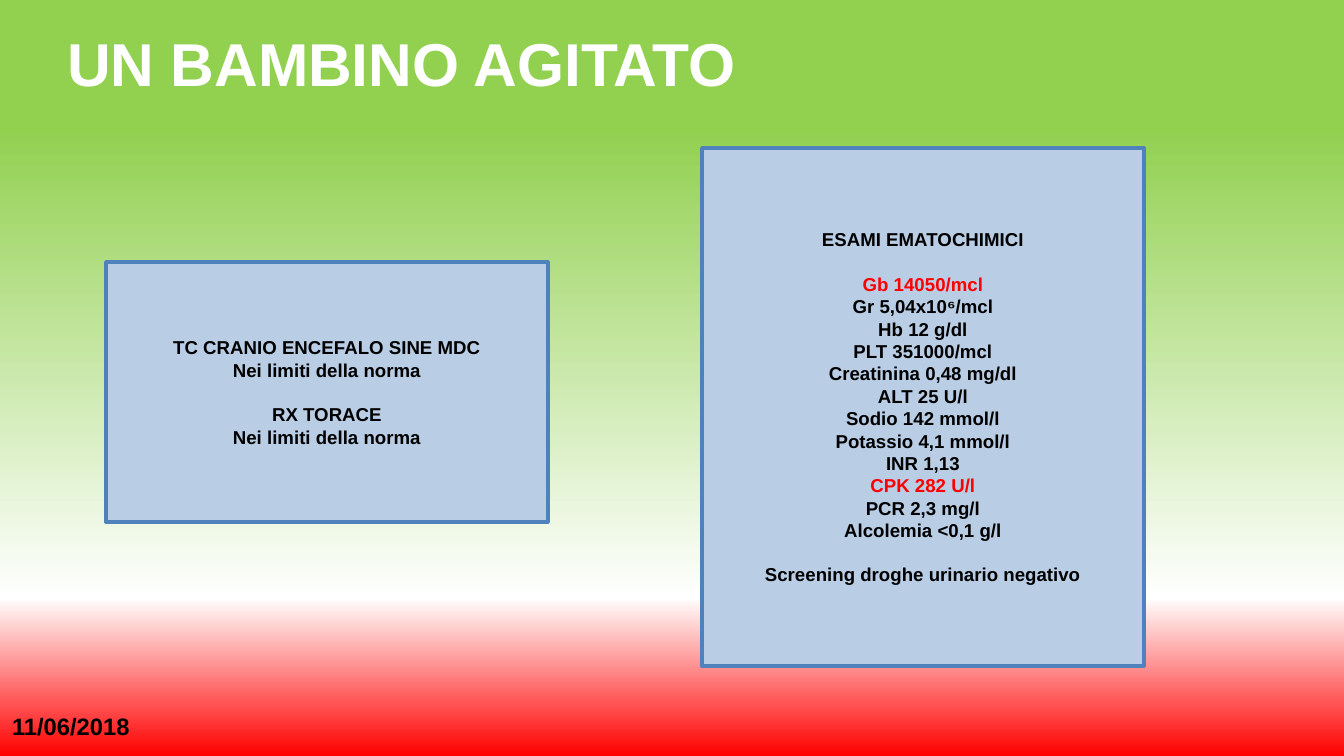
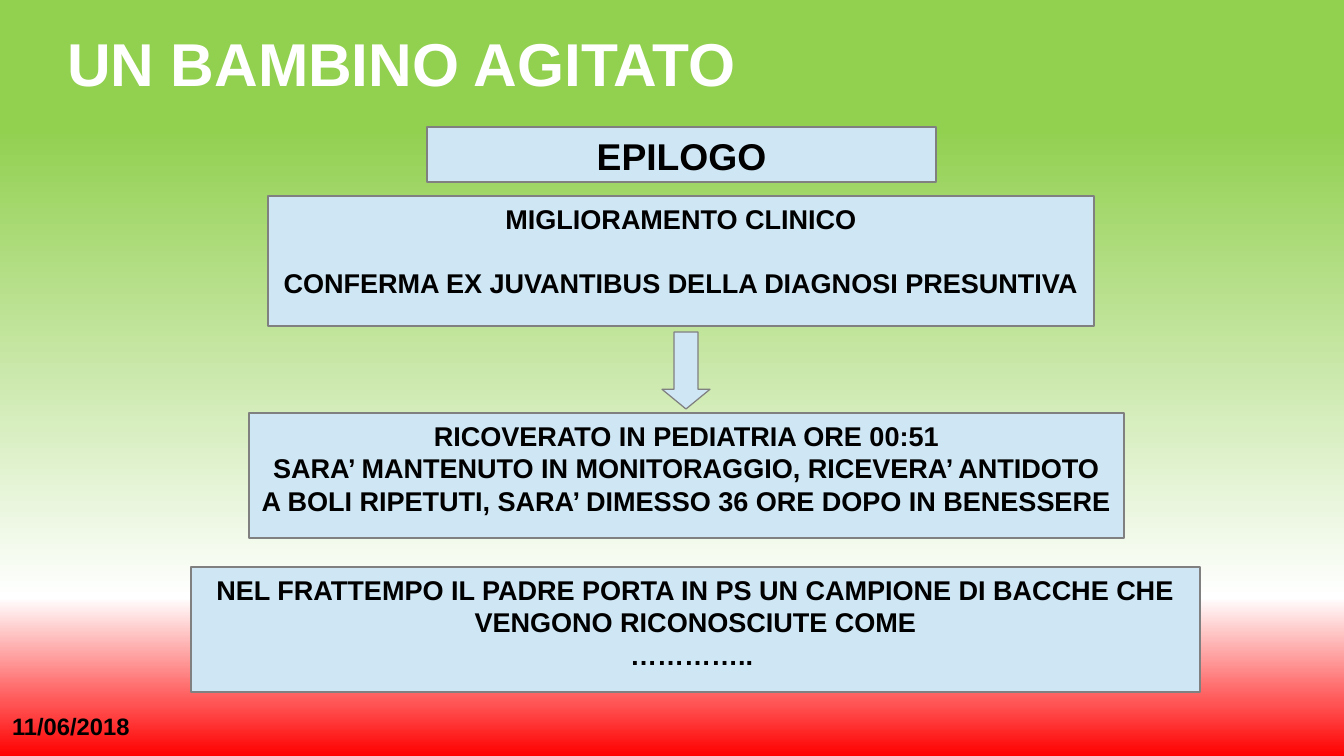
"""Build two slides of a paediatric case: test results and epilogue."""
from lxml import etree
from pptx import Presentation
from pptx.dml.color import RGBColor
from pptx.enum.shapes import MSO_SHAPE
from pptx.enum.text import MSO_ANCHOR, MSO_AUTO_SIZE, PP_ALIGN
from pptx.oxml import parse_xml
from pptx.util import Emu, Pt

RECTANGLE, DOWN_ARROW = MSO_SHAPE.RECTANGLE, MSO_SHAPE.DOWN_ARROW
TOP, MIDDLE = MSO_ANCHOR.TOP, MSO_ANCHOR.MIDDLE
LEFT, CENTER = PP_ALIGN.LEFT, PP_ALIGN.CENTER
NO_AUTOFIT = MSO_AUTO_SIZE.NONE

PX = 914400 / 122
SLIDE_SIZE = (1344, 756)
FONT = "Arial"
BLACK, WHITE, RED = "000000", "FFFFFF", "FF0000"
GRADIENT = [(17, "92D050"), (79, WHITE), (93, "FF5555"), (100, RED)]
EXAM_STYLE = {"fill": "B9CDE5", "line": "4F81BD", "weight": 2, "anchor": MIDDLE, "wrap": True}
STEP_STYLE = {"fill": "CFE7F5", "line": "808080", "weight": 0.75, "anchor": TOP, "wrap": False}

TITLE, TITLE_AREA = "UN BAMBINO AGITATO", (67, 5, 937, 115)
DATE, DATE_AREA = "11/06/2018", (0, 706, 211, 41)
ABNORMAL = {"Gb 14050/mcl", "CPK 282 U/l"}
EXAMS = [
    ((106, 262, 442, 260), 11, [
        ["TC CRANIO ENCEFALO SINE MDC", "Nei limiti della norma"],
        ["RX TORACE", "Nei limiti della norma"],
    ]),
    ((702, 148, 442, 518), 11, [
        ["ESAMI EMATOCHIMICI"],
        ["Gb 14050/mcl", "Gr 5,04x10⁶/mcl", "Hb 12 g/dl", "PLT 351000/mcl",
         "Creatinina 0,48 mg/dl", "ALT 25 U/l", "Sodio 142 mmol/l",
         "Potassio 4,1 mmol/l", "INR 1,13", "CPK 282 U/l", "PCR 2,3 mg/l",
         "Alcolemia <0,1 g/l"],
        ["Screening droghe urinario negativo"],
    ]),
]
EPILOGUE = [
    ((427, 127, 509, 55), 22, [["EPILOGO"]]),
    ((268, 196, 826, 130), 16, [
        ["MIGLIORAMENTO CLINICO"],
        ["CONFERMA EX JUVANTIBUS DELLA DIAGNOSI PRESUNTIVA"],
    ]),
    ((249, 413, 875, 125), 16, [
        ["RICOVERATO IN PEDIATRIA ORE 00:51",
         "SARA’ MANTENUTO IN MONITORAGGIO, RICEVERA’ ANTIDOTO",
         "A BOLI RIPETUTI, SARA’ DIMESSO 36 ORE DOPO IN BENESSERE"],
    ]),
    ((191, 567, 1009, 125), 16, [
        ["NEL FRATTEMPO IL PADRE PORTA IN PS UN CAMPIONE DI BACCHE CHE",
         "VENGONO RICONOSCIUTE COME",
         "………….. "],
    ]),
]
ARROW_AREA = (662, 332, 48, 77)
SLIDES = [(EXAMS, EXAM_STYLE, None), (EPILOGUE, STEP_STYLE, ARROW_AREA)]


def rgb(color):
    return RGBColor.from_string(color)


def emu(area):
    return [Emu(round(length * PX)) for length in area]


def set_background(master):
    fill = master.background.fill
    fill.gradient()
    fill.gradient_angle = 270
    stops = master._element.find(".//{*}bg//{*}gsLst")
    for stop in list(stops):
        stops.remove(stop)
    for position, color in GRADIENT:
        namespace = etree.QName(stops).namespace
        stops.append(parse_xml(
            f'<a:gs xmlns:a="{namespace}" pos="{position * 1000}">'
            f'<a:srgbClr val="{color}"/></a:gs>'))


def format_text(paragraph, size, color, align):
    paragraph.alignment = align
    for run in paragraph.runs:
        run.font.name, run.font.size, run.font.bold = FONT, Pt(size), True
        run.font.color.rgb = rgb(color)


def add_heading(slide):
    title = slide.shapes.title
    title.left, title.top, title.width, title.height = emu(TITLE_AREA)
    frame = title.text_frame
    frame.text = TITLE
    frame.auto_size, frame.vertical_anchor = NO_AUTOFIT, MIDDLE
    frame.margin_left = frame.margin_right = frame.margin_top = frame.margin_bottom = 0
    format_text(frame.paragraphs[0], 35.7, WHITE, LEFT)


def add_date(slide):
    frame = slide.shapes.add_textbox(*emu(DATE_AREA)).text_frame
    frame.text, frame.word_wrap = DATE, True
    format_text(frame.paragraphs[0], 14, BLACK, LEFT)


def add_panel(slide, preset, area, style):
    panel = slide.shapes.add_shape(preset, *emu(area))
    panel.shadow.inherit = False
    panel.fill.solid()
    panel.fill.fore_color.rgb = rgb(style["fill"])
    panel.line.color.rgb = rgb(style["line"])
    panel.line.width = Pt(style["weight"])
    return panel


def add_text_panel(slide, area, size, groups, style):
    frame = add_panel(slide, RECTANGLE, area, style).text_frame
    frame.word_wrap, frame.vertical_anchor = style["wrap"], style["anchor"]
    frame.text = "\n".join(line for group in groups for line in group)
    paragraphs = iter(frame.paragraphs)
    for group_number, group in enumerate(groups):
        for line_number, line in enumerate(group):
            paragraph = next(paragraphs)
            format_text(paragraph, size, RED if line in ABNORMAL else BLACK, CENTER)
            if group_number and not line_number:
                paragraph.space_before = Pt(round(size * 1.2))


def main():
    deck = Presentation()
    deck.slide_width, deck.slide_height = emu(SLIDE_SIZE)
    set_background(deck.slide_master)
    for panels, style, arrow_area in SLIDES:
        slide = deck.slides.add_slide(deck.slide_layouts[5])
        add_heading(slide)
        for area, size, groups in panels:
            add_text_panel(slide, area, size, groups, style)
        if arrow_area:
            arrow = add_panel(slide, DOWN_ARROW, arrow_area, style)
            arrow.adjustments[0], arrow.adjustments[1] = 0.5, 0.41
        add_date(slide)
    deck.save("out.pptx")


if __name__ == "__main__":
    main()
